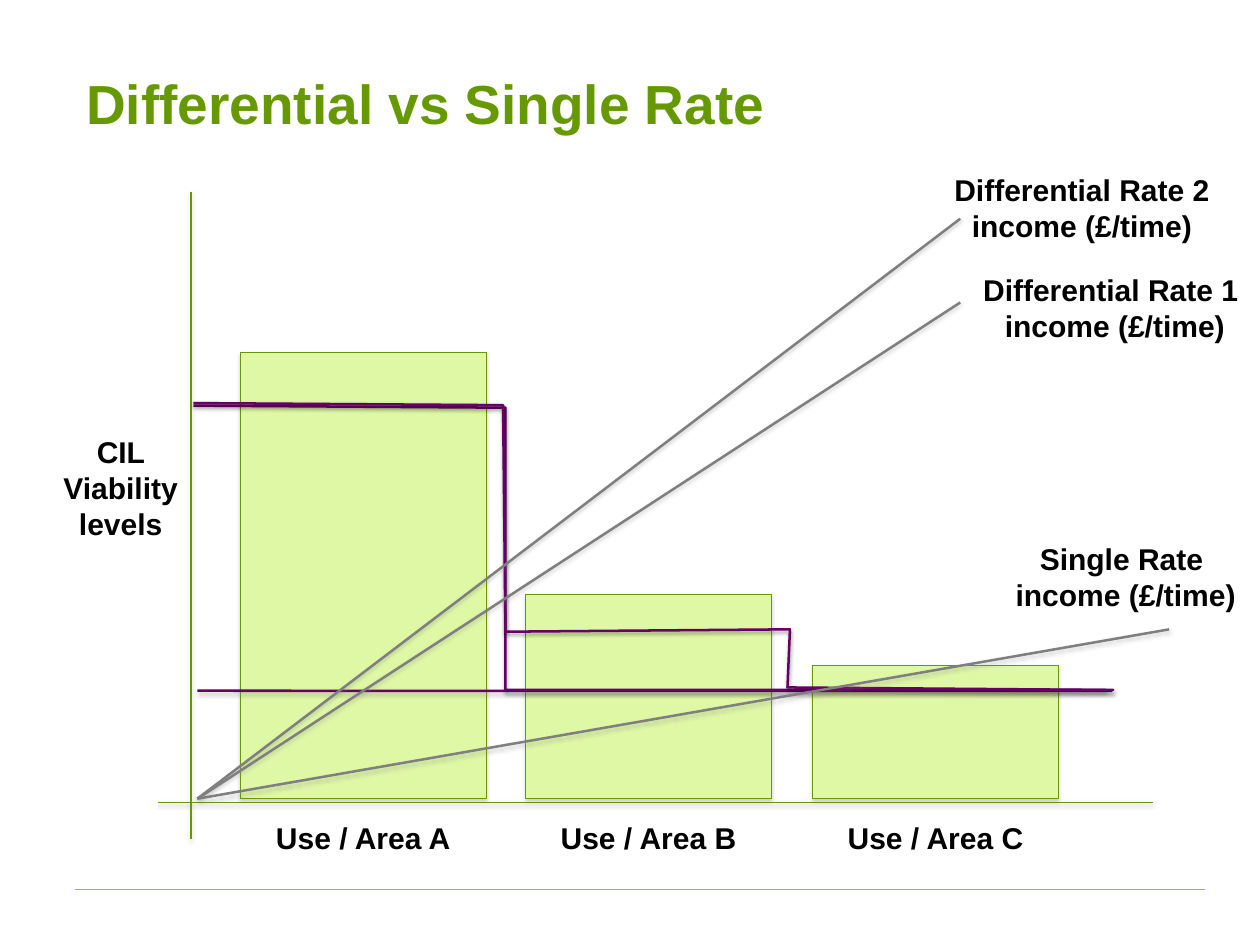
from lxml.etree import SubElement
from pptx import Presentation
from pptx.dml.color import RGBColor
from pptx.enum.shapes import MSO_CONNECTOR, MSO_SHAPE
from pptx.enum.text import MSO_ANCHOR, PP_ALIGN
from pptx.oxml.ns import qn
from pptx.util import Pt

COLOURS = {
    "title": "669900",
    "axis": "669900",
    "bar": "DFF8A6",
    "rule": "99CC00",
    "rate": "660066",
    "income": "7F7F7F",
    "text": "000000",
    "line shadow": "808080",
    "step shadow": "000000",
}


class SlideBuilder:
    """Holds the style and the current slide."""

    font = "Arial"
    label_size = 24
    wide_margins = (9, 5)
    normal_margins = (7.2, 3.6)

    def __init__(self, slide):
        self.slide = slide

    def colour(self, name):
        return RGBColor.from_string(COLOURS[name])

    def shadow(self, shape, name=None, opacity=38, distance=1.6):
        """Set a soft shadow straight below, or none without a name."""
        effects = SubElement(shape._element.spPr, qn("a:effectLst"))
        if name:
            outer = SubElement(effects, qn("a:outerShdw"), {
                "blurRad": str(Pt(3.1)), "dist": str(Pt(distance)),
                "dir": "5400000", "rotWithShape": "0"})
            colour = SubElement(outer, qn("a:srgbClr"), val=COLOURS[name])
            SubElement(colour, qn("a:alpha"), val=str(opacity * 1000))

    def outline(self, shape, name, width):
        shape.line.color.rgb = self.colour(name)
        shape.line.width = Pt(width)

    def line(self, start, end, name, width, shadow="line shadow"):
        connector = self.slide.shapes.add_connector(
            MSO_CONNECTOR.STRAIGHT, *map(Pt, start + end))
        self.outline(connector, name, width)
        self.shadow(connector, shadow)

    def bar(self, left, top, width, height):
        shape = self.slide.shapes.add_shape(
            MSO_SHAPE.RECTANGLE, Pt(left), Pt(top), Pt(width), Pt(height))
        shape.fill.solid()
        shape.fill.fore_color.rgb = self.colour("bar")
        self.outline(shape, "axis", 0.75)
        self.shadow(shape, "line shadow", 35, 1.8)

    def steps(self, points):
        corners = [(Pt(x), Pt(y)) for x, y in points]
        builder = self.slide.shapes.build_freeform(*corners[0])
        builder.add_line_segments(corners[1:], close=False)
        shape = builder.convert_to_shape()
        shape.fill.background()
        self.outline(shape, "rate", 2)
        self.shadow(shape, "step shadow")

    def text(self, lines, left, top, width, height, margins=normal_margins,
             size=label_size, name="text", align=PP_ALIGN.CENTER,
             anchor=MSO_ANCHOR.TOP):
        box = self.slide.shapes.add_textbox(
            Pt(left), Pt(top), Pt(width), Pt(height))
        frame = box.text_frame
        frame.word_wrap = True
        frame.vertical_anchor = anchor
        frame.margin_left = frame.margin_right = Pt(margins[0])
        frame.margin_top = frame.margin_bottom = Pt(margins[1])
        paragraph = frame.paragraphs[0]
        paragraph.alignment = align
        for index, line in enumerate(lines):
            if index:
                paragraph.add_line_break()
            run = paragraph.add_run()
            run.text = line
            run.font.name = self.font
            run.font.size = Pt(size)
            run.font.bold = True
            run.font.color.rgb = self.colour(name)


def main():
    presentation = Presentation()
    presentation.slide_width = Pt(1008)
    presentation.slide_height = Pt(756)
    slide = presentation.slides.add_slide(presentation.slide_layouts[6])
    builder = SlideBuilder(slide)

    # Footer rule and title
    builder.line((60, 711.2), (964, 711.2), "rule", 0.75, shadow=None)
    builder.text(["Differential vs Single Rate"], 60, 30, 907, 104,
                 SlideBuilder.wide_margins, 44, "title", PP_ALIGN.LEFT,
                 MSO_ANCHOR.MIDDLE)

    # Vertical axis
    builder.line((152.8, 153.5), (152.8, 671.5), "axis", 1.5)

    # Bars with their labels, standing on one base
    base, bar_width = 638.8, 196.7
    bars = [("Use / Area A", 192.2, 281.8),
            ("Use / Area B", 420.4, 475.6),
            ("Use / Area C", 650, 532.3)]
    for label, left, top in bars:
        builder.bar(left, top, bar_width, base - top)
        builder.text([label], left, 651, bar_width, 39,
                     SlideBuilder.wide_margins)

    # Single rate level, horizontal axis and axis label
    builder.line((157.9, 552.6), (890, 552.8), "rate", 2)
    builder.line((126, 642), (922.5, 642), "axis", 1.5)
    builder.text(["CIL Viability levels"], 39, 341.5, 115, 97,
                 SlideBuilder.wide_margins)

    # Differential rate steps
    builder.steps([(154.8, 324.5), (404.4, 326.2), (404.4, 552),
                   (890.6, 552), (887, 552)])
    builder.steps([(154.8, 322.5), (402.5, 324.2), (404.4, 505.4),
                   (632, 503.5), (630, 550), (885, 552)])

    # Income lines from the origin, with their labels
    incomes = [
        (["Differential Rate 2", "income (£/time)"],
         (768.2, 175), (753, 134, 225, 65.5)),
        (["Single Rate ", "income (£/time)"],
         (935.3, 503.5), (793.5, 429, 214, 65.5)),
        (["Differential Rate 1", " income (£/time)"],
         (768.2, 242), (774, 214, 229, 65.5)),
    ]
    for lines, end, place in incomes:
        builder.line((157.9, 639), end, "income", 2)
        builder.text(lines, *place)

    presentation.save("out.pptx")


if __name__ == "__main__":
    main()
